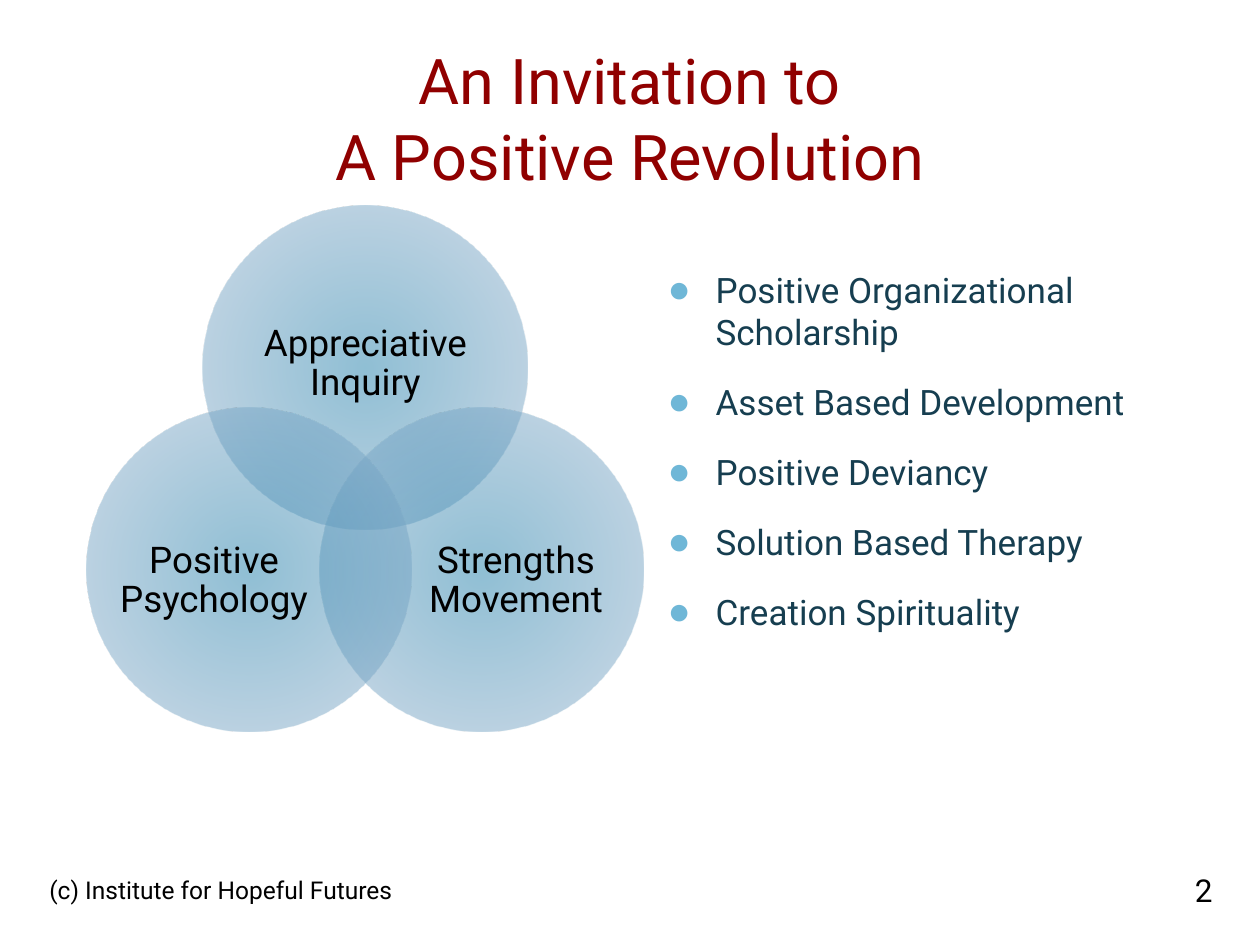
from dataclasses import dataclass
from pptx import Presentation
from pptx.dml.color import RGBColor
from pptx.enum.shapes import MSO_SHAPE
from pptx.enum.text import MSO_ANCHOR, PP_ALIGN
from pptx.oxml import parse_xml
from pptx.oxml.ns import nsdecls, qn
from pptx.util import Emu, Pt


@dataclass
class Theme:
    font: str = "Roboto"
    bullet_font: str = "Arial"
    title: str = "900000"
    body: str = "163E50"
    text: str = "000000"
    bullet: str = "6FB7D7"
    stops: tuple = ((0, "2080AB"), (69, "75A5C5"), (100, "B8CCDC"))
    title_size: int = 36
    label_size: int = 21
    body_size: int = 20
    number_size: int = 18
    footer_size: int = 14


T = Theme()


def px(*values):
    return [Emu(v * 914400 // 126) for v in values]


def write(p, text, size, color=T.text, align=PP_ALIGN.LEFT, spacing=None, before=0):
    p.text = text
    p.alignment = align
    p.line_spacing = spacing
    p.space_before = Pt(before)
    for r in p.runs:
        r.font.name = T.font
        r.font.size = Pt(size)
        r.font.color.rgb = RGBColor.from_string(color)


prs = Presentation()
prs.slide_width, prs.slide_height = px(1260, 945)
s = prs.slides.add_slide(prs.slide_layouts[1])
title, body = s.placeholders

title.left, title.top, title.width, title.height = px(76, 15, 1108, 184)
title.text_frame.vertical_anchor = MSO_ANCHOR.BOTTOM
write(title.text_frame.paragraphs[0], "An Invitation to\vA Positive Revolution",
      T.title_size, T.title, PP_ALIGN.CENTER)

stops = "".join(
    f'<a:gs pos="{pos * 1000}"><a:srgbClr val="{color}"><a:alpha val="50000"/></a:srgbClr></a:gs>'
    for pos, color in T.stops)
gradient = (f'<a:gradFill {nsdecls("a")} rotWithShape="1"><a:gsLst>{stops}</a:gsLst>'
            '<a:path path="circle"><a:fillToRect l="50000" t="50000" r="50000" b="50000"/>'
            '</a:path></a:gradFill>')

circles = [
    ("Appreciative Inquiry", (203, 206), (247, 291, 237, 146)),
    ("Strengths Movement", (320, 408), (419, 492, 194, 178)),
    ("Positive Psychology", (87, 408), (117, 492, 194, 178)),
]
for label, corner, box in circles:
    sp = s.shapes.add_shape(MSO_SHAPE.OVAL, *px(*corner, 324, 324))
    sp.shadow.inherit = False
    sp.line.fill.background()
    sp._element.spPr.find(qn("a:prstGeom")).addnext(parse_xml(gradient))

    tf = s.shapes.add_textbox(*px(*box)).text_frame
    tf.word_wrap = True
    tf.vertical_anchor = MSO_ANCHOR.MIDDLE
    tf.margin_left = tf.margin_right = tf.margin_top = tf.margin_bottom = 0
    write(tf.paragraphs[0], label, T.label_size, align=PP_ALIGN.CENTER, spacing=0.9)

body.left, body.top, body.width, body.height = px(655, 262, 529, 508)
topics = ["Positive Organizational Scholarship", "Asset Based Development",
          "Positive Deviancy", "Solution Based Therapy", "Creation Spirituality"]
tf = body.text_frame
indent, = px(48)
for i, topic in enumerate(topics):
    p = tf.add_paragraph() if i else tf.paragraphs[0]
    write(p, topic, T.body_size, T.body, before=16)
    pPr = p._p.get_or_add_pPr()
    pPr.set("marL", str(indent))
    pPr.set("indent", str(-indent))
    for tag in (f'buClr {nsdecls("a")}><a:srgbClr val="{T.bullet}"/></a:buClr',
                f'buSzPct {nsdecls("a")} val="110000"/',
                f'buFont {nsdecls("a")} typeface="{T.bullet_font}"/',
                f'buChar {nsdecls("a")} char="●"/'):
        pPr.append(parse_xml(f"<a:{tag}>"))

footers = [
    ("2", (1089, 865, 136, 50), T.number_size, PP_ALIGN.RIGHT),
    ("(c) Institute for Hopeful Futures", (37, 865, 667, 50), T.footer_size, PP_ALIGN.LEFT),
]
for text, box, size, align in footers:
    tf = s.shapes.add_textbox(*px(*box)).text_frame
    tf.word_wrap = True
    tf.vertical_anchor = MSO_ANCHOR.MIDDLE
    write(tf.paragraphs[0], text, size, align=align)

prs.save("out.pptx")
